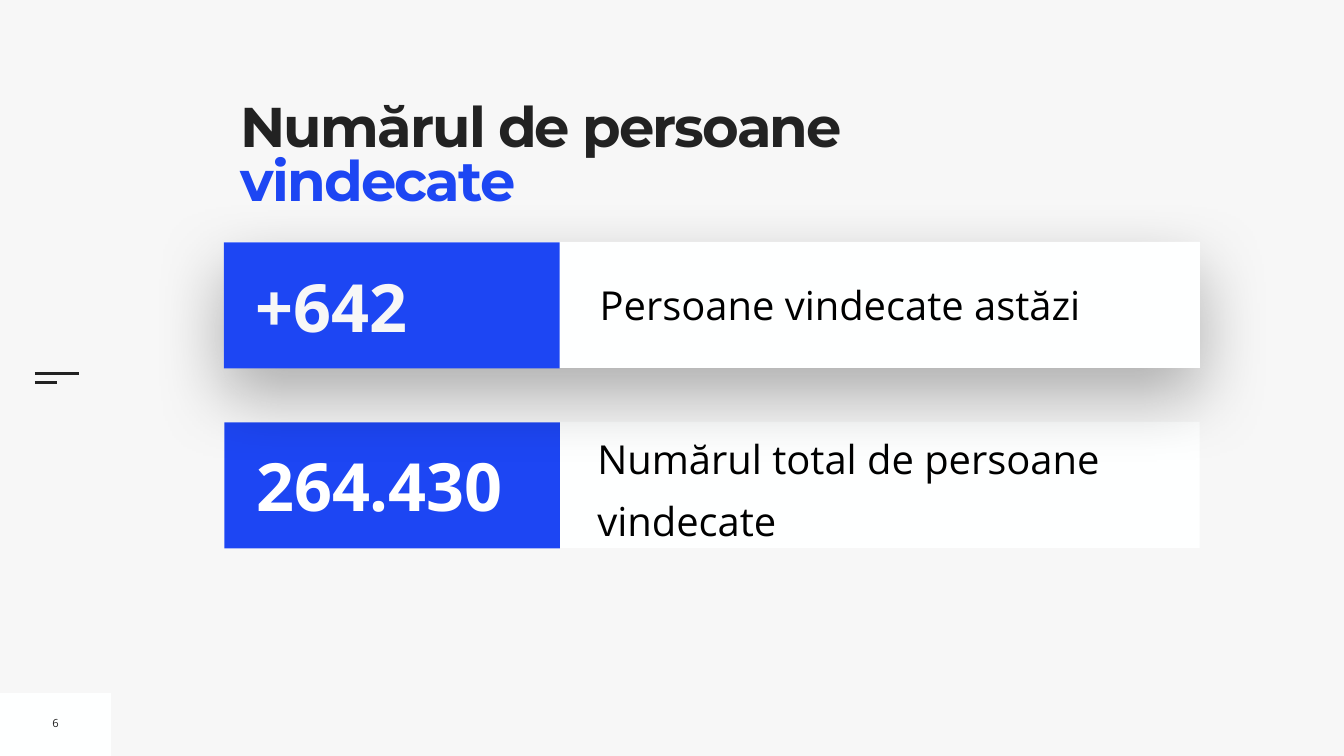
from dataclasses import dataclass

from lxml import etree
from pptx import Presentation
from pptx.dml.color import RGBColor
from pptx.enum.shapes import MSO_CONNECTOR, MSO_SHAPE
from pptx.enum.text import MSO_ANCHOR, MSO_AUTO_SIZE, PP_ALIGN
from pptx.oxml.ns import qn
from pptx.util import Inches, Pt

RECT = MSO_SHAPE.RECTANGLE
LINE = MSO_CONNECTOR.STRAIGHT
TOP, MIDDLE = MSO_ANCHOR.TOP, MSO_ANCHOR.MIDDLE
GROW, FIXED = MSO_AUTO_SIZE.SHAPE_TO_FIT_TEXT, MSO_AUTO_SIZE.NONE
LEFT, CENTER = PP_ALIGN.LEFT, PP_ALIGN.CENTER


@dataclass(frozen=True)
class Theme:
    """Colours, fonts and type sizes of the slide."""
    paper: str = "F7F7F7"
    card: str = "FEFFFF"
    blue: str = "1D46F3"
    ink: str = "222222"
    black: str = "000000"
    white: str = "FFFFFF"
    head: str = "Montserrat"
    body: str = "Open Sans"
    title: int = 80
    figure: int = 95
    label: int = 57
    small: int = 16


@dataclass(frozen=True)
class Box:
    """A rectangle in inches."""
    x: float
    y: float
    w: float
    h: float

    def cut(self, x, y, w, h):
        """Return the box that covers the given shares of this one."""
        return Box(self.x + x * self.w, self.y + y * self.h, w * self.w, h * self.h)

    def frame(self):
        """Return left, top, width and height as lengths."""
        return [Inches(v) for v in (self.x, self.y, self.w, self.h)]


THEME = Theme()
PAGE = Box(0, 0, 26.67, 15)


def paint(fill, color):
    """Give a fill one solid colour."""
    fill.solid()
    fill.fore_color.rgb = RGBColor.from_string(color)


def block(shapes, box, color):
    """Add a plain filled rectangle."""
    shape = shapes.add_shape(RECT, *box.frame())
    shape.shadow.inherit = False
    paint(shape.fill, color)
    shape.line.fill.background()
    return shape


def shade(shape):
    """Give a shape a soft shadow that falls downwards."""
    effects = shape._element.spPr.find(qn("a:effectLst"))
    outer = etree.SubElement(effects, qn("a:outerShdw"), blurRad=str(Pt(100)),
                             dist=str(Pt(40)), dir="5400000", rotWithShape="0")
    color = etree.SubElement(outer, qn("a:srgbClr"), val=THEME.black)
    etree.SubElement(color, qn("a:alpha"), val="30000")


def setup(frame, inset, anchor, fit, wrap=True):
    """Set the margins, anchor and fit of a text frame."""
    frame.word_wrap = wrap
    frame.auto_size = fit
    frame.vertical_anchor = anchor
    frame.margin_left = frame.margin_right = Inches(inset)
    frame.margin_top = frame.margin_bottom = Inches(inset)


def write(para, text, size, color, font=THEME.body, bold=False):
    """Add one formatted run to a paragraph."""
    run = para.add_run()
    run.text = text
    run.font.name, run.font.size, run.font.bold = font, Pt(size), bold
    run.font.color.rgb = RGBColor.from_string(color)
    return run


def note(shapes, box, text, size, color, bold=False, inset=0.1, wrap=True):
    """Add a text box with one run and return its paragraph."""
    frame = shapes.add_textbox(*box.frame()).text_frame
    setup(frame, inset, MIDDLE, GROW, wrap)
    para = frame.paragraphs[0]
    write(para, text, size, color, bold=bold)
    return para


def margin(shapes, box):
    """Draw the page number corner and the two short rules."""
    block(shapes, box.cut(0, 0.917, 0.0825, 0.083), THEME.card)
    for top, wide in ((0.494, 0.033), (0.506, 0.0165)):
        x, y, w, _ = box.cut(0.026, top, wide, 0).frame()
        line = shapes.add_connector(LINE, x, y, x + w, y)
        line.line.width = Pt(3)
        line.line.color.rgb = RGBColor.from_string(THEME.ink)
        etree.SubElement(line._element.spPr, qn("a:effectLst"))
    para = note(shapes, box.cut(0.035, 0.939, 0.0127, 0.034), "6",
                THEME.small, THEME.ink, wrap=False)
    para.alignment = CENTER


def heading(shape, box):
    """Place the title and write its two colours."""
    shape.left, shape.top, shape.width, shape.height = box.frame()
    paint(shape.fill, THEME.paper)
    setup(shape.text_frame, 0, TOP, FIXED)
    para = shape.text_frame.paragraphs[0]
    para.alignment, para.line_spacing = LEFT, 0.8
    for text, color in (("Numărul de persoane ", THEME.ink), ("vindecate", THEME.blue)):
        run = write(para, text, THEME.title, color, THEME.head, True)
        run._r.get_or_add_rPr().set("spc", "-270")


def card(shapes, box, figure, label, color, span, inset=0.1, raised=False):
    """Group a white card, its label and a blue panel with a figure."""
    group = shapes.add_group_shape().shapes
    back = block(group, box, THEME.card)
    if raised:
        shade(back)
    para = note(group, box.cut(*span), label, THEME.label, THEME.black, inset=inset)
    block(group, box.cut(0, 0.004, 0.344, 1), THEME.blue)
    note(group, box.cut(0.0275, 0.144, 0.3115, 0.72), figure, THEME.figure, color, True)
    return para


def main():
    """Build and save the slide."""
    deck = Presentation()
    deck.slide_width, deck.slide_height = Inches(PAGE.w), Inches(PAGE.h)
    slide = deck.slides.add_slide(deck.slide_layouts[5])
    paint(slide.background.fill, THEME.paper)
    shapes = slide.shapes
    heading(shapes.title, PAGE.cut(0.179, 0.138, 0.488, 0.182))
    margin(shapes, PAGE)
    total = card(shapes, PAGE.cut(0.167, 0.558, 0.7255, 0.1667), "264.430",
                 "Numărul total de persoane vindecate", THEME.white,
                 (0.3825, 0.008, 0.6175, 0.944), inset=0)
    total.line_spacing, total.space_before = 1.3, Pt(20)
    card(shapes, PAGE.cut(0.1665, 0.32, 0.7263, 0.1667), "+642",
         "Persoane vindecate astăzi", THEME.paper,
         (0.38, 0.268, 0.607, 0.464), raised=True)
    deck.save("out.pptx")


if __name__ == "__main__":
    main()
